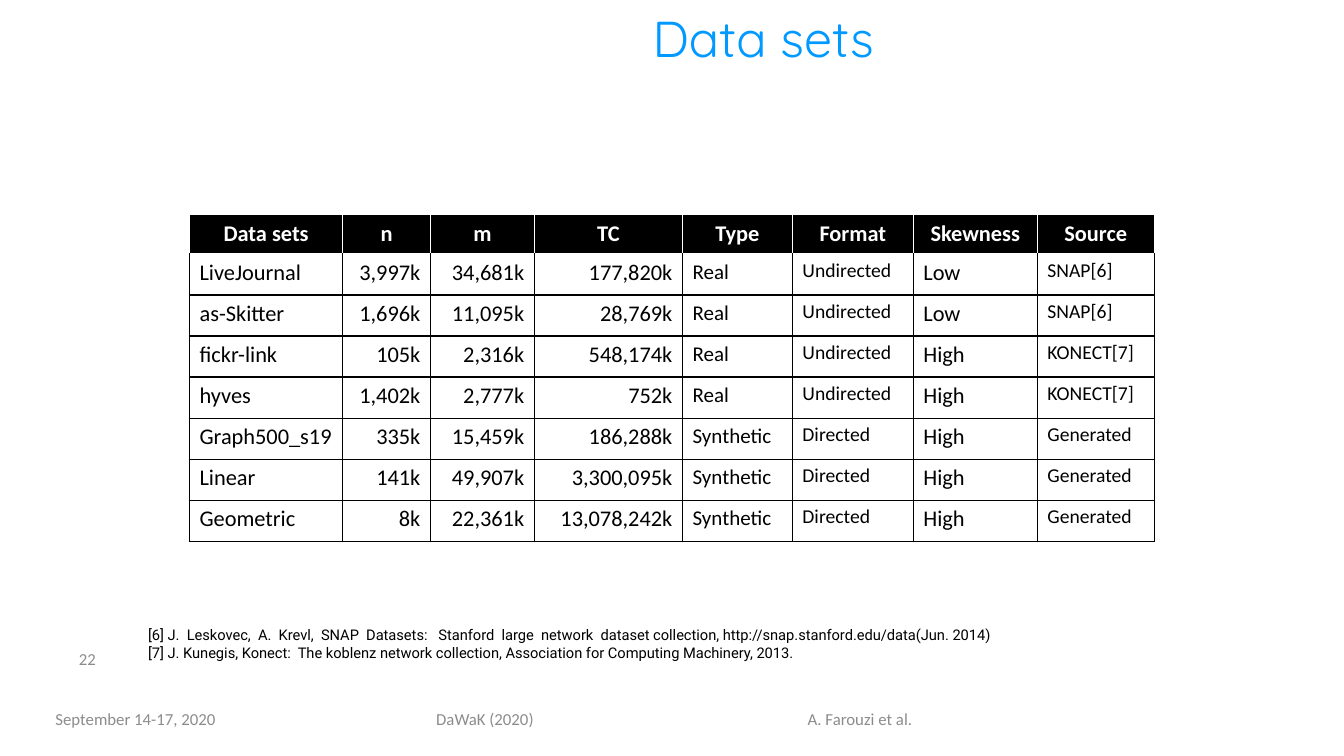
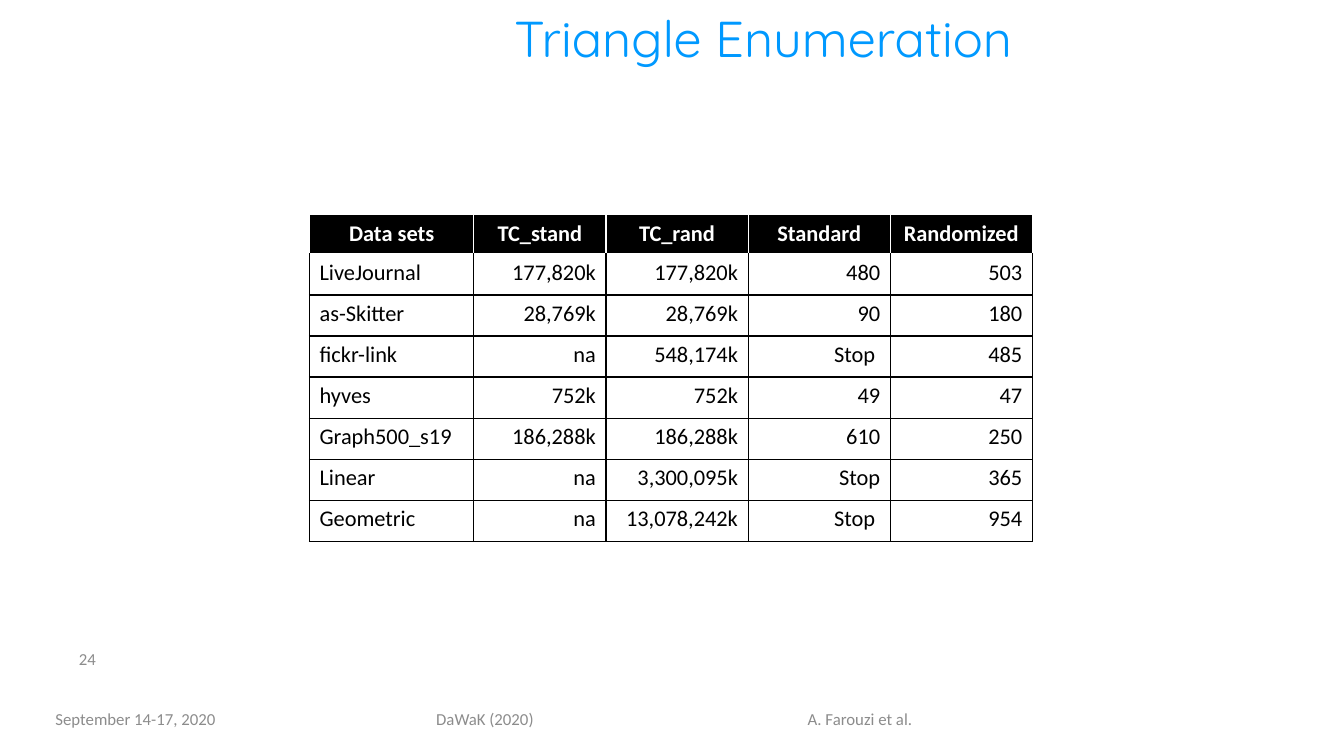
from dataclasses import dataclass

from lxml import etree
from pptx import Presentation
from pptx import util as u
from pptx.dml import color
from pptx.enum import text
from pptx.oxml import ns

ALIGN = text.PP_ALIGN
ANCHOR = text.MSO_ANCHOR


@dataclass(frozen=True)
class Theme:
    """Colours, fonts and type sizes shared by the slides."""
    title_color: str = "0099FF"
    footer_color: str = "8C8C8C"
    ink: str = "000000"
    paper: str = "FFFFFF"
    title_font: str = "Quicksand"
    body_font: str = "Calibri"
    reference_font: str = "Roboto"
    title_size: float = 36
    table_size: float = 16
    type_size: float = 15
    detail_size: float = 14
    footer_size: float = 12
    reference_size: float = 10.5
    border_width: float = 1


THEME = Theme()

TITLE_BOX = (2.47, 0.06, 10.2, 0.62)
NUMBER_BOX = (0, 6.34, 1.05, 0.4)
REFERENCE_BOX = (1.37, 6.16, 9.91, 0.45)
FOOTERS = [
    ("September 14-17, 2020", (0.36, 6.96, 1.97, 0.35)),
    ("DaWaK (2020)", (3.34, 6.96, 2.94, 0.35)),
    ("A. Farouzi et al.", (7.73, 6.96, 1.6, 0.35)),
]
TABLE_TOP, TABLE_HEIGHT, HEADER_HEIGHT = 2.13, 3.24, 0.39


@dataclass(frozen=True)
class Column:
    heading: str
    width: float
    align: ALIGN = ALIGN.RIGHT
    size: float = THEME.table_size


# Slide content
DATA_SET_COLUMNS = [
    Column("Data sets", 1.52, ALIGN.LEFT),
    Column("n", 0.87),
    Column("m", 1.03),
    Column("TC", 1.47),
    Column("Type", 1.09, ALIGN.LEFT, THEME.type_size),
    Column("Format", 1.2, ALIGN.LEFT, THEME.detail_size),
    Column("Skewness", 1.23, ALIGN.LEFT),
    Column("Source", 1.16, ALIGN.LEFT, THEME.detail_size),
]
DATA_SET_ROWS = [
    ("LiveJournal", "3,997k", "34,681k", "177,820k", "Real", "Undirected", "Low", "SNAP[6]"),
    ("as-Skitter", "1,696k", "11,095k", "28,769k", "Real", "Undirected", "Low", "SNAP[6]"),
    ("fickr-link", "105k", "2,316k", "548,174k", "Real", "Undirected", "High", "KONECT[7]"),
    ("hyves", "1,402k", "2,777k", "752k", "Real", "Undirected", "High", "KONECT[7]"),
    ("Graph500_s19", "335k", "15,459k", "186,288k", "Synthetic", "Directed", "High", "Generated"),
    ("Linear", "141k", "49,907k", "3,300,095k", "Synthetic", "Directed", "High", "Generated"),
    ("Geometric", "8k", "22,361k", "13,078,242k", "Synthetic", "Directed", "High", "Generated"),
]
REFERENCES = [
    "[6] J.  Leskovec,  A.  Krevl,  SNAP  Datasets:   Stanford  large  network  dataset collection, "
    "http://snap.stanford.edu/data(Jun. 2014)",
    "[7] J. Kunegis, Konect:  The koblenz network collection, "
    "Association for Computing Machinery, 2013.",
]
ENUMERATION_COLUMNS = [
    Column("Data sets", 1.63, ALIGN.LEFT),
    Column("TC_stand", 1.31),
    Column("TC_rand", 1.41),
    Column("Standard", 1.41),
    Column("Randomized", 1.41),
]
ENUMERATION_ROWS = [
    ("LiveJournal", "177,820k", "177,820k", "480", "503"),
    ("as-Skitter", "28,769k", "28,769k", "90", "180"),
    ("fickr-link", "na", "548,174k", "Stop ", "485"),
    ("hyves", "752k", "752k", "49", "47"),
    ("Graph500_s19", "186,288k", "186,288k", "610", "250"),
    ("Linear", "na", "3,300,095k", "Stop", "365"),
    ("Geometric", "na", "13,078,242k", "Stop ", "954"),
]


# Text
def set_attributes(target, values):
    for name, value in values.items():
        setattr(target, name, value)


def write_paragraph(paragraph, words, align, font, size, rgb, bold=False):
    paragraph.alignment = align
    run = paragraph.add_run()
    run.text = words
    set_attributes(run.font, {"name": font, "size": u.Pt(size), "bold": bold})
    run.font.color.rgb = color.RGBColor.from_string(rgb)


def add_text(slide, lines, box, align, font, size, rgb, anchor=ANCHOR.MIDDLE):
    frame = slide.shapes.add_textbox(*map(u.Inches, box)).text_frame
    set_attributes(frame, {"word_wrap": True, "vertical_anchor": anchor})
    for index, line in enumerate(lines):
        paragraph = frame.add_paragraph() if index else frame.paragraphs[0]
        write_paragraph(paragraph, line, align, font, size, rgb)


# Table
def set_borders(cell, rgb, top_rgb):
    properties = cell._tc.get_or_add_tcPr()
    for side in "LRTB":
        line = etree.SubElement(properties, ns.qn(f"a:ln{side}"),
                                w=str(u.Pt(THEME.border_width)))
        fill = etree.SubElement(line, ns.qn("a:solidFill"))
        etree.SubElement(fill, ns.qn("a:srgbClr"), val=top_rgb if side == "T" else rgb)


def fill_cell(cell, words, column, row_index):
    header = row_index == 0
    set_borders(cell, THEME.paper if header else THEME.ink,
                THEME.paper if row_index < 2 else THEME.ink)
    if header:
        cell.fill.solid()
        cell.fill.fore_color.rgb = color.RGBColor.from_string(THEME.ink)
    else:
        cell.fill.background()
    cell.vertical_anchor = ANCHOR.MIDDLE if header else ANCHOR.TOP
    write_paragraph(cell.text_frame.paragraphs[0], words,
                    ALIGN.CENTER if header else column.align, THEME.body_font,
                    THEME.table_size if header else column.size,
                    THEME.paper if header else THEME.ink, header)


def add_data_table(slide, left, columns, rows):
    width = sum(column.width for column in columns)
    table = slide.shapes.add_table(
        len(rows) + 1, len(columns),
        *map(u.Inches, (left, TABLE_TOP, width, TABLE_HEIGHT))).table
    set_attributes(table, {"first_row": False, "horz_banding": False})
    for index, column in enumerate(columns):
        table.columns[index].width = u.Inches(column.width)
    body_height = (TABLE_HEIGHT - HEADER_HEIGHT) / len(rows)
    headings = [column.heading for column in columns]
    for row_index, row in enumerate([headings, *rows]):
        table.rows[row_index].height = u.Inches(body_height if row_index else HEADER_HEIGHT)
        for column_index, words in enumerate(row):
            fill_cell(table.cell(row_index, column_index), words,
                      columns[column_index], row_index)


# Slide frame: title, page number and footers
def add_framed_slide(presentation, title, number):
    slide = presentation.slides.add_slide(presentation.slide_layouts[6])
    add_text(slide, [title], TITLE_BOX, ALIGN.CENTER,
             THEME.title_font, THEME.title_size, THEME.title_color)
    footer_style = (THEME.body_font, THEME.footer_size, THEME.footer_color)
    add_text(slide, [number], NUMBER_BOX, ALIGN.RIGHT, *footer_style)
    for words, box in FOOTERS:
        add_text(slide, [words], box, ALIGN.CENTER, *footer_style)
    return slide


def main():
    presentation = Presentation()
    set_attributes(presentation, {"slide_width": u.Inches(13.33),
                                  "slide_height": u.Inches(7.5)})

    # Data sets
    slide = add_framed_slide(presentation, "Data sets", "22")
    add_data_table(slide, 1.88, DATA_SET_COLUMNS, DATA_SET_ROWS)
    add_text(slide, REFERENCES, REFERENCE_BOX, ALIGN.LEFT, THEME.reference_font,
             THEME.reference_size, THEME.ink, ANCHOR.TOP)

    # Triangle enumeration
    slide = add_framed_slide(presentation, "Triangle Enumeration", "24")
    add_data_table(slide, 3.07, ENUMERATION_COLUMNS, ENUMERATION_ROWS)

    presentation.save("out.pptx")


if __name__ == "__main__":
    main()
